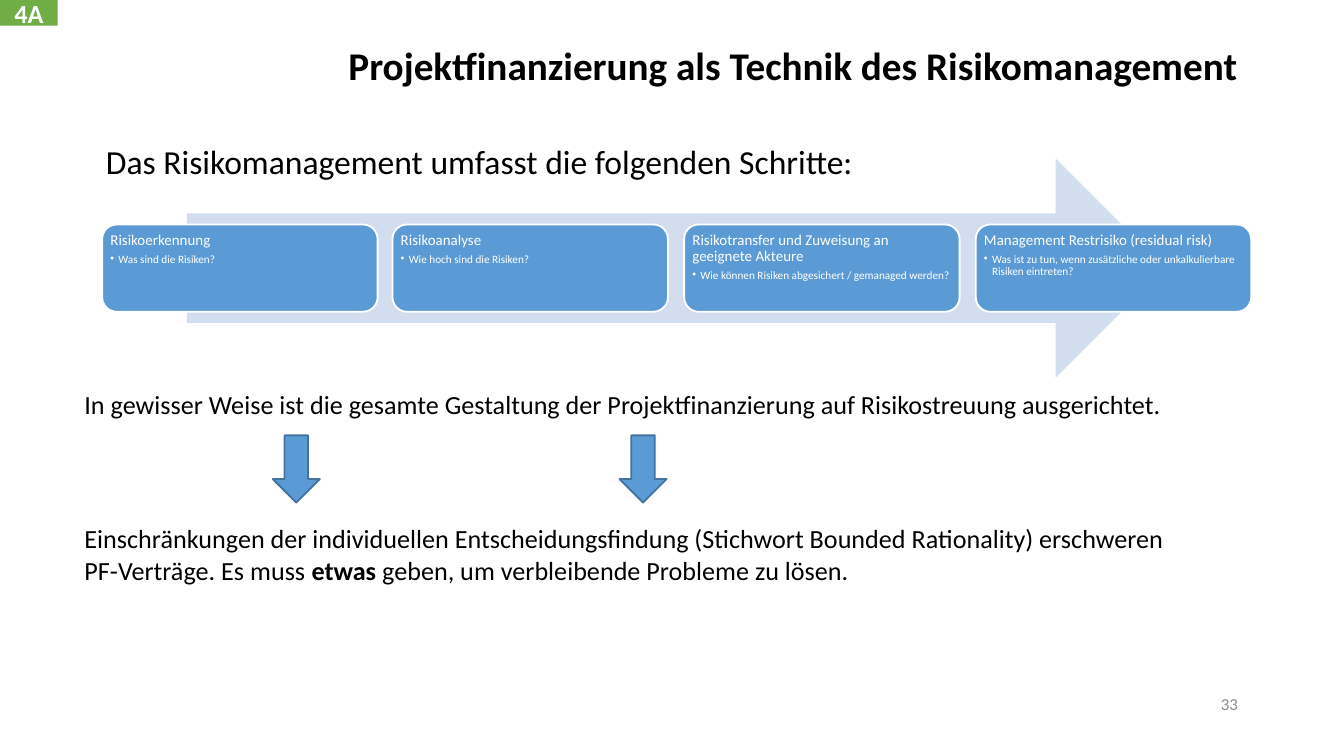
import pptx
import pptx.dml.color
import pptx.enum.shapes
import pptx.enum.text
import pptx.oxml.ns
import pptx.util
from lxml import etree

RGBColor = pptx.dml.color.RGBColor
SHAPE = pptx.enum.shapes.MSO_SHAPE
ALIGN = pptx.enum.text.PP_ALIGN
ANCHOR = pptx.enum.text.MSO_ANCHOR

BLACK = RGBColor(0x00, 0x00, 0x00)
WHITE = RGBColor(0xFF, 0xFF, 0xFF)
GREY = RGBColor(0x8C, 0x8C, 0x8C)
BLUE = RGBColor(0x5B, 0x9B, 0xD5)
DARK_BLUE = RGBColor(0x43, 0x73, 0x9E)
PALE_BLUE = RGBColor(0xD2, 0xDE, 0xEF)
GREEN = RGBColor(0x70, 0xAD, 0x47)

EMU_PER_PX = 9144
STEPS = [
    ("Risikoerkennung", "Was sind die Risiken?"),
    ("Risikoanalyse", "Wie hoch sind die Risiken?"),
    ("Risikotransfer und Zuweisung an geeignete Akteure",
     "Wie können Risiken abgesichert / gemanaged werden?"),
    ("Management Restrisiko (residual risk)",
     "Was ist zu tun, wenn zusätzliche oder unkalkulierbare Risiken eintreten?"),
]


def px(*lengths):
    return [pptx.util.Emu(length * EMU_PER_PX) for length in lengths]


class SlideBuilder:
    """Draws styled elements on the current slide."""

    font = "Calibri"

    def __init__(self, slide):
        self.slide = slide

    def add_run(self, paragraph, text, size, color, bold=False):
        run = paragraph.add_run()
        run.text = text
        run.font.name = self.font
        run.font.size = pptx.util.Pt(size)
        run.font.color.rgb = color
        run.font.bold = bold

    def frame(self, shape, anchor=ANCHOR.TOP, insets=(10, 5)):
        text_frame = shape.text_frame
        text_frame.word_wrap = True
        text_frame.auto_size = pptx.enum.text.MSO_AUTO_SIZE.NONE
        text_frame.vertical_anchor = anchor
        horizontal, vertical = px(*insets)
        text_frame.margin_left = text_frame.margin_right = horizontal
        text_frame.margin_top = text_frame.margin_bottom = vertical
        return text_frame

    def title(self, box, text):
        shape = self.slide.shapes.title
        shape.left, shape.top, shape.width, shape.height = px(*box)
        paragraph = self.frame(shape).paragraphs[0]
        paragraph.alignment = ALIGN.RIGHT
        paragraph.line_spacing = 0.9
        self.add_run(paragraph, text, 21, BLACK, True)

    def text(self, box, runs, size, color=BLACK, align=ALIGN.LEFT,
             anchor=ANCHOR.TOP, line_spacing=1.0):
        shape = self.slide.shapes.add_textbox(*px(*box))
        paragraph = self.frame(shape, anchor).paragraphs[0]
        paragraph.alignment = align
        paragraph.line_spacing = line_spacing
        for text, bold in runs:
            self.add_run(paragraph, text, size, color, bold)

    def shape(self, kind, box, fill, line=None):
        shape = self.slide.shapes.add_shape(kind, *px(*box))
        shape.shadow.inherit = False
        shape.fill.solid()
        shape.fill.fore_color.rgb = fill
        if line is None:
            shape.line.fill.background()
        else:
            shape.line.color.rgb = line
            shape.line.width = pptx.util.Pt(1)
        return shape

    def badge(self, box, text):
        shape = self.shape(SHAPE.RECTANGLE, box, GREEN)
        paragraph = self.frame(shape, ANCHOR.MIDDLE, (0, 0)).paragraphs[0]
        paragraph.alignment = ALIGN.CENTER
        self.add_run(paragraph, text, 14, WHITE, True)

    def step(self, box, heading, question):
        shape = self.shape(SHAPE.ROUNDED_RECTANGLE, box, BLUE, WHITE)
        text_frame = self.frame(shape, insets=(3, 3))
        first, second = text_frame.paragraphs[0], text_frame.add_paragraph()
        self.bullet(second)
        for paragraph, text, size, gap in (
            (first, heading, 8, 2.8), (second, question, 6, 0.9)
        ):
            paragraph.alignment = ALIGN.LEFT
            paragraph.line_spacing = 0.9
            paragraph.space_after = pptx.util.Pt(gap)
            self.add_run(paragraph, text, size, WHITE)

    def bullet(self, paragraph):
        paragraph.level = 1
        properties = paragraph._p.get_or_add_pPr()
        indent = px(6)[0]
        properties.set("marL", str(indent))
        properties.set("indent", str(-indent))
        mark = etree.SubElement(properties, pptx.oxml.ns.qn("a:buChar"))
        mark.set("char", "•")


def main():
    presentation = pptx.Presentation()
    presentation.slide_width = px(1000)[0]
    presentation.slide_height = presentation.slide_width * 9 // 16
    slide = presentation.slides.add_slide(presentation.slide_layouts[5])
    builder = SlideBuilder(slide)

    builder.title((69, 30, 862, 43),
                  "Projektfinanzierung als Technik des Risikomanagement")
    builder.text((69, 103, 862, 53),
                 [("Das Risikomanagement umfasst die folgenden Schritte:", False)],
                 18, line_spacing=0.9)
    builder.shape(SHAPE.RIGHT_ARROW, (139, 118, 728, 163), PALE_BLUE)
    for index, (heading, question) in enumerate(STEPS):
        left = 76 + index * 650 // 3
        builder.step((left, 167, 205, 65), heading, question)

    builder.text((53, 284, 876, 34),
                 [("In gewisser Weise ist die gesamte Gestaltung der "
                   "Projektfinanzierung auf Risikostreuung ausgerichtet.", False)], 14)
    builder.text((53, 384, 835, 57),
                 [("Einschränkungen der individuellen Entscheidungsfindung "
                   "(Stichwort Bounded Rationality) erschweren PF-Verträge. "
                   "Es muss ", False),
                  ("etwas", True),
                  (" geben, um verbleibende Probleme zu lösen.", False)], 14)
    for left in (203, 461):
        builder.shape(SHAPE.DOWN_ARROW, (left, 324, 35, 50), BLUE, DARK_BLUE)

    builder.text((706, 509, 225, 30), [("33", False)], 9, GREY,
                 ALIGN.RIGHT, ANCHOR.MIDDLE)
    builder.badge((0, 0, 43, 19), "4A")
    presentation.save("out.pptx")


if __name__ == "__main__":
    main()
